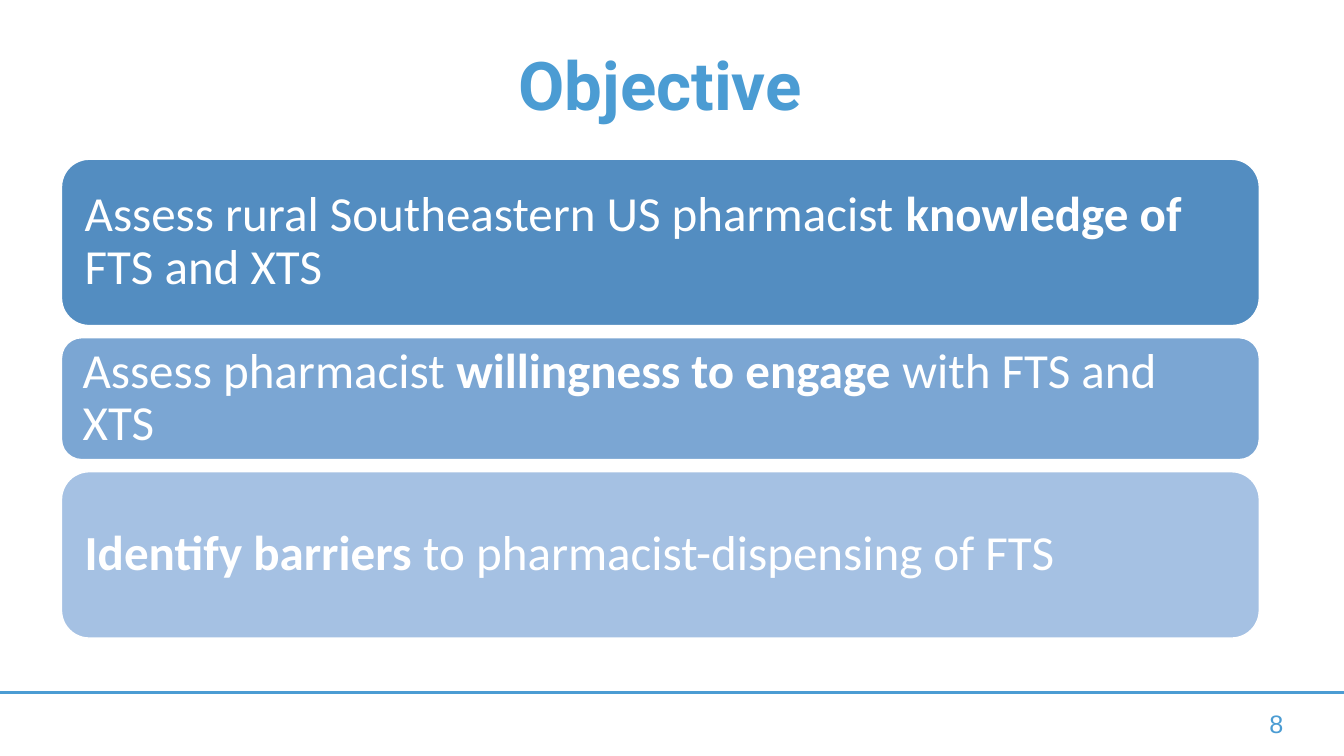
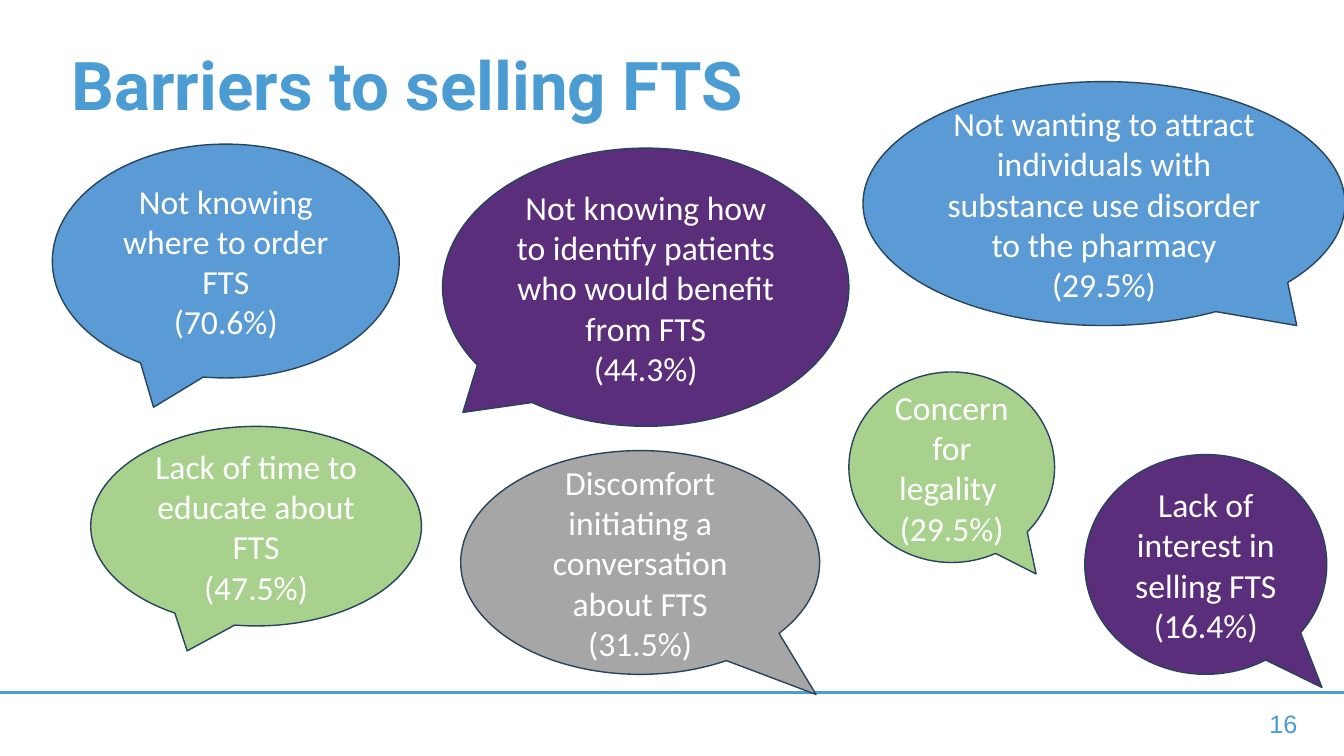
from dataclasses import dataclass

from lxml import etree
from pptx import Presentation
from pptx.dml.color import RGBColor
from pptx.enum.shapes import MSO_CONNECTOR, MSO_SHAPE
from pptx.enum.text import MSO_ANCHOR, MSO_AUTO_SIZE, PP_ALIGN
from pptx.oxml.ns import qn
from pptx.util import Emu, Pt

LEFT, CENTER = PP_ALIGN.LEFT, PP_ALIGN.CENTER
TOP, MIDDLE = MSO_ANCHOR.TOP, MSO_ANCHOR.MIDDLE
ROUNDED, CALLOUT = MSO_SHAPE.ROUNDED_RECTANGLE, MSO_SHAPE.OVAL_CALLOUT
STRAIGHT = MSO_CONNECTOR.STRAIGHT
NO_AUTOFIT = MSO_AUTO_SIZE.NONE

EMU_PER_PX = 9144  # 100 px to the inch
SLIDE_WIDTH, SLIDE_HEIGHT = 1333, 750
MARGIN, CONTENT_WIDTH = 61, 1188
TITLE_ONLY = 5


@dataclass(frozen=True)
class Theme:
    accent: str = "4B9CD3"
    white: str = "FFFFFF"
    outline: str = "28445D"
    blue: str = "5B9BD5"
    green: str = "A9D18E"
    purple: str = "5A2E7B"
    gray: str = "A6A6A6"
    bars: tuple = ("538DC1", "7BA6D3", "A5C1E3")
    title_font: str = "Roboto"
    body_font: str = "Calibri"
    number_font: str = "Arial"
    title_size: int = 48
    bar_size: int = 35
    callout_size: int = 24
    number_size: int = 18


THEME = Theme()

# Each bar: height and spans of (text, bold)
BAR_TOP, BAR_GAP, BAR_INSET = 158, 12, 15
BARS = [
    (165, [("Assess rural Southeastern US pharmacist ", False),
           ("knowledge of ", True), ("FTS and XTS", False)]),
    (121, [("Assess pharmacist ", False),
           ("willingness to engage ", True), ("with FTS and XTS", False)]),
    (165, [("Identify barriers ", True),
           ("to pharmacist-dispensing of FTS", False)]),
]

# Each callout: box, fill, pointer offset (None keeps the preset one), paragraphs
CALLOUTS = [
    ((52, 143, 344, 232), THEME.blue, None,
     ["Not knowing where to order FTS", "(70.6%)"]),
    ((90, 423, 328, 198), THEME.green, None,
     ["Lack of time to educate about FTS", "(47.5%)"]),
    ((439, 147, 403, 276), THEME.purple, (-0.45, 0.45),
     ["Not knowing how to identify patients who would benefit from FTS",
      "(44.3%)"]),
    ((457, 447, 356, 222), THEME.gray, (0.49, 0.59),
     ["Discomfort initiating a conversation about FTS (31.5%)"]),
    ((842, 369, 204, 189), THEME.green, (0.41, 0.56),
     ["Concern for legality ", "(29.5%)"]),
    ((856, 81, 478, 242), THEME.blue, (0.4, 0.5),
     ["Not wanting to attract individuals with substance use disorder "
      "to the pharmacy", "(29.5%)"]),
    ((1076, 451, 240, 218), THEME.purple, (0.48, 0.56),
     ["Lack of interest in selling FTS (16.4%)"]),
]


def px(length):
    return Emu(length * EMU_PER_PX)


def px_box(box):
    return [px(length) for length in box]


def rgb(color):
    return RGBColor.from_string(color)


def write_text(shape, paragraphs, *, size, font=THEME.body_font,
               color=THEME.white, align=LEFT, anchor=MIDDLE,
               line_spacing=None, inset=None):
    """Fill a shape with paragraphs, each a list of (text, bold) spans."""
    frame = shape.text_frame
    frame.word_wrap = True
    frame.auto_size = NO_AUTOFIT
    frame.vertical_anchor = anchor
    if inset is not None:
        frame.margin_left = frame.margin_right = px(inset)
        frame.margin_top = frame.margin_bottom = px(inset)
    for index, spans in enumerate(paragraphs):
        para = frame.add_paragraph() if index else frame.paragraphs[0]
        para.alignment = align
        if line_spacing:
            para.line_spacing = line_spacing
        for text, bold in spans:
            span = para.add_run()
            span.text = text
            span.font.name = font
            span.font.size = Pt(size)
            span.font.bold = bold
            span.font.color.rgb = rgb(color)


def add_filled_shape(slide, preset, box, fill, outline):
    shape = slide.shapes.add_shape(preset, *px_box(box))
    shape.shadow.inherit = False
    shape.fill.solid()
    shape.fill.fore_color.rgb = rgb(fill)
    shape.line.color.rgb = rgb(outline)
    shape.line.width = Pt(1)
    return shape


def add_footer(slide, number):
    rule = slide.shapes.add_connector(
        STRAIGHT, *px_box((0, 687, SLIDE_WIDTH, 687)))
    rule.line.color.rgb = rgb(THEME.accent)
    rule.line.width = Pt(2.25)
    etree.SubElement(rule.element.spPr, qn("a:effectLst"))
    box = slide.shapes.add_textbox(*px_box((1249, 698, 69, 40)))
    write_text(box, [[(str(number), False)]], size=THEME.number_size,
               font=THEME.number_font, color=THEME.accent, anchor=TOP)


def add_titled_slide(deck, title, number, align=LEFT):
    slide = deck.slides.add_slide(deck.slide_layouts[TITLE_ONLY])
    heading = slide.shapes.title
    heading.left, heading.top, heading.width, heading.height = px_box(
        (MARGIN, 47, CONTENT_WIDTH, 75))
    write_text(heading, [[(title, True)]], size=THEME.title_size,
               font=THEME.title_font, color=THEME.accent, align=align,
               anchor=TOP, line_spacing=0.9)
    add_footer(slide, number)
    return slide


def add_bars(slide):
    top = BAR_TOP
    for (height, spans), fill in zip(BARS, THEME.bars):
        bar = add_filled_shape(slide, ROUNDED,
                               (MARGIN, top, CONTENT_WIDTH, height),
                               fill, THEME.white)
        write_text(bar, [spans], size=THEME.bar_size, line_spacing=0.9,
                   inset=BAR_INSET)
        top += height + BAR_GAP


def add_callout(slide, box, fill, pointer, lines):
    callout = add_filled_shape(slide, CALLOUT, box, fill, THEME.outline)
    if pointer:
        callout.adjustments[0], callout.adjustments[1] = pointer
    write_text(callout, [[(line, False)] for line in lines],
               size=THEME.callout_size, align=CENTER)


def main():
    deck = Presentation()
    deck.slide_width, deck.slide_height = px(SLIDE_WIDTH), px(SLIDE_HEIGHT)

    add_bars(add_titled_slide(deck, "Objective", 8, align=CENTER))

    barriers = add_titled_slide(deck, "Barriers to selling FTS", 16)
    for callout in CALLOUTS:
        add_callout(barriers, *callout)

    deck.save("out.pptx")


if __name__ == "__main__":
    main()
